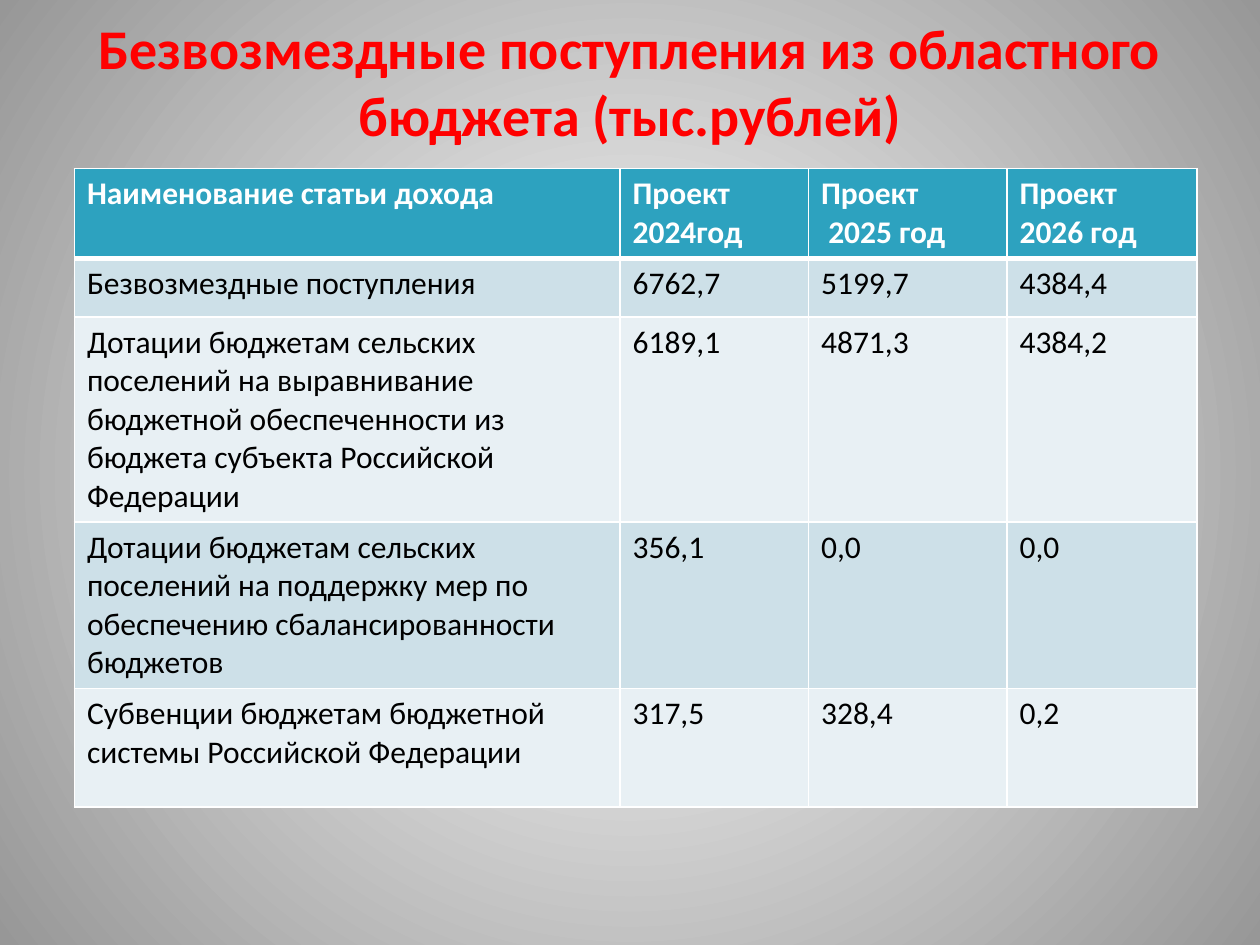
import dataclasses

import pptx
import pptx.dml.color
import pptx.enum.text
import pptx.oxml
import pptx.oxml.ns
import pptx.util

Cm = pptx.util.Cm
Pt = pptx.util.Pt
RGB = pptx.dml.color.RGBColor.from_string
qn = pptx.oxml.ns.qn
NS = pptx.oxml.ns.nsdecls("a")


@dataclasses.dataclass
class Theme:
    font: str = "Calibri"
    title_size: int = 32
    table_size: int = 18
    title: str = "FF0000"
    header_fill: str = "2DA2BF"
    header_text: str = "FFFFFF"
    body_text: str = "000000"
    bands: tuple = ("CDE0E8", "E8F0F4")
    border: str = "FFFFFF"
    thin: int = 1
    thick: int = 3
    center: str = "FFFFFF"
    edge: str = "979797"


class SlideBuilder:
    def __init__(self, slide, theme):
        self.s = slide
        self.theme = theme

    def add_run(self, p, text, size, color, bold=False):
        r = p.add_run()
        r.text = text
        r.font.name = self.theme.font
        r.font.size = Pt(size)
        r.font.bold = bold
        r.font.color.rgb = RGB(color)
        return r

    def background(self):
        """Fill the background with a gradient spreading from the centre."""
        fill = self.s.background.fill
        fill.gradient()
        colors = (self.theme.center, self.theme.edge)
        for position, (stop, color) in enumerate(zip(fill.gradient_stops, colors)):
            stop.position = position
            stop.color.rgb = RGB(color)
        grad = self.s.element.find(".//" + qn("a:gradFill"))
        grad.replace(grad.find(qn("a:lin")), pptx.oxml.parse_xml(
            f'<a:path {NS} path="circle"><a:fillToRect l="50000" t="50000" '
            'r="50000" b="50000"/></a:path>'))

    def title(self, text, left, top, width, height):
        sp = self.s.shapes.title
        sp.left, sp.top, sp.width, sp.height = map(Cm, (left, top, width, height))
        tf = sp.text_frame
        tf.word_wrap = True
        tf.auto_size = pptx.enum.text.MSO_AUTO_SIZE.NONE
        tf.vertical_anchor = pptx.enum.text.MSO_ANCHOR.MIDDLE
        p = tf.paragraphs[0]
        p.alignment = pptx.enum.text.PP_ALIGN.CENTER
        r = self.add_run(p, text, self.theme.title_size, self.theme.title, True)
        r.font.fill  # the text shadow must follow the fill in the run properties
        r.font._element.find(qn("a:solidFill")).addnext(pptx.oxml.parse_xml(
            f'<a:effectLst {NS}><a:outerShdw blurRad="50800" dist="38100" '
            'dir="5400000"><a:srgbClr val="000000"><a:alpha val="70000"/>'
            '</a:srgbClr></a:outerShdw></a:effectLst>'))

    def borders(self, cell, top, bottom):
        tc_pr = cell._tc.get_or_add_tcPr()
        thin = self.theme.thin
        sides = (("L", thin), ("R", thin), ("T", top), ("B", bottom))
        for i, (side, width) in enumerate(sides):
            tc_pr.insert(i, pptx.oxml.parse_xml(
                f'<a:ln{side} {NS} w="{Pt(width)}"><a:solidFill>'
                f'<a:srgbClr val="{self.theme.border}"/></a:solidFill></a:ln{side}>'))

    def table(self, rows, left, top, widths, heights):
        """Add a table whose first row is the header; a newline splits paragraphs."""
        th = self.theme
        table = self.s.shapes.add_table(
            len(rows), len(widths), Cm(left), Cm(top),
            Cm(sum(widths)), Cm(sum(heights))).table
        for column, width in zip(table.columns, widths):
            column.width = Cm(width)
        for i, (row, height, texts) in enumerate(zip(table.rows, heights, rows)):
            row.height = Cm(height)
            header = i == 0
            fill = th.header_fill if header else th.bands[(i - 1) % 2]
            color = th.header_text if header else th.body_text
            for cell, text in zip(row.cells, texts):
                cell.fill.solid()
                cell.fill.fore_color.rgb = RGB(fill)
                self.borders(cell, th.thick if i == 1 else th.thin,
                             th.thick if header else th.thin)
                tf = cell.text_frame
                for n, line in enumerate(text.split("\n")):
                    p = tf.add_paragraph() if n else tf.paragraphs[0]
                    self.add_run(p, line, th.table_size, color, header)


INCOME_ROWS = [
    ("Наименование статьи дохода", "Проект 2024год", "Проект\n 2025 год",
     "Проект 2026 год"),
    ("Безвозмездные поступления", "6762,7", "5199,7", "4384,4"),
    ("Дотации бюджетам сельских поселений на выравнивание бюджетной "
     "обеспеченности из бюджета субъекта Российской Федерации",
     "6189,1", "4871,3", "4384,2"),
    ("Дотации бюджетам сельских поселений на поддержку мер по обеспечению "
     "сбалансированности бюджетов", "356,1", "0,0", "0,0"),
    ("Субвенции бюджетам бюджетной системы Российской Федерации",
     "317,5", "328,4", "0,2"),
]


def main():
    prs = pptx.Presentation()
    prs.slide_width, prs.slide_height = Cm(25.4), Cm(19.05)
    title_only = prs.slide_layouts[5]
    builder = SlideBuilder(prs.slides.add_slide(title_only), Theme())
    builder.background()
    builder.title("Безвозмездные поступления из областного бюджета (тыс.рублей)",
                  1.27, 0.33, 22.86, 2.6)
    builder.table(INCOME_ROWS, 1.5, 3.4, widths=(11, 3.8, 4, 3.83),
                  heights=(1.68, 1.19, 4.11, 3.35, 2.39))
    prs.save("out.pptx")


if __name__ == "__main__":
    main()
